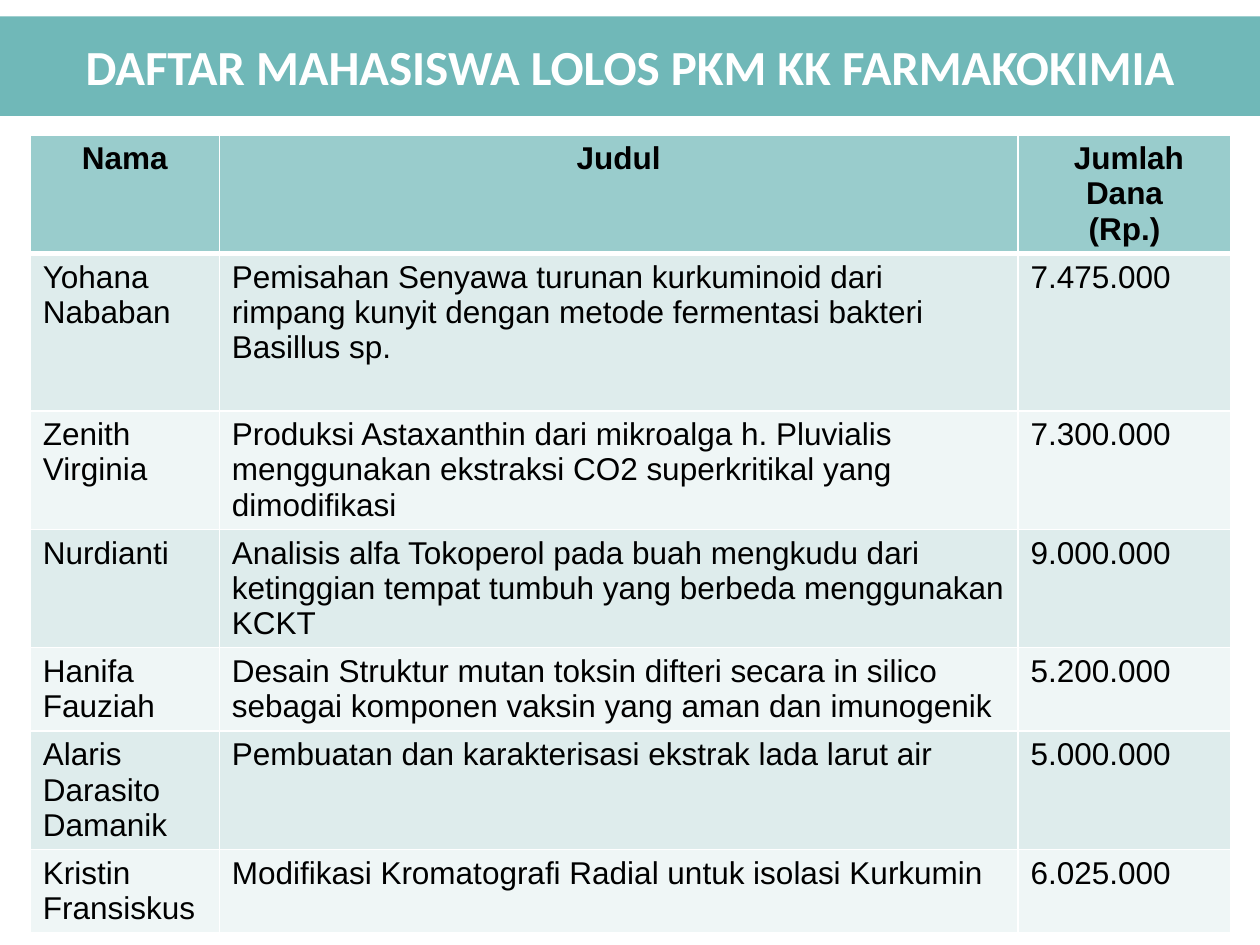
from pptx import Presentation, util as u
from pptx.dml.color import RGBColor
from pptx.enum import text as t
from pptx.oxml import parse_xml
from pptx.oxml.ns import nsdecls

TITLE = "DAFTAR MAHASISWA LOLOS PKM KK FARMAKOKIMIA"
HEAD = ("Nama", "Judul", " Jumlah Dana\n(Rp.)")
ROWS = [
    ("Yohana Nababan", "Pemisahan Senyawa turunan kurkuminoid dari rimpang kunyit dengan metode fermentasi bakteri Basillus sp.", "7.475.000"),
    ("Zenith Virginia", "Produksi Astaxanthin dari mikroalga h. Pluvialis menggunakan ekstraksi CO2 superkritikal yang dimodifikasi", "7.300.000"),
    ("Nurdianti", "Analisis alfa Tokoperol pada buah mengkudu dari ketinggian tempat tumbuh yang berbeda menggunakan KCKT", "9.000.000"),
    ("Hanifa Fauziah", "Desain Struktur mutan toksin difteri secara in silico sebagai komponen vaksin yang aman dan imunogenik", "5.200.000"),
    ("Alaris Darasito Damanik", "Pembuatan dan karakterisasi ekstrak lada larut air", "5.000.000"),
    ("Kristin Fransiskus", "Modifikasi Kromatografi Radial untuk isolasi Kurkumin", "6.025.000"),
]
COLS = (1.5, 6.34, 1.69)
HIGH = (0.93, 1.25, 0.94, 0.94, 0.66, 0.94, 0.66)
HUES = {"title": "70B8B8", "head": "99CCCC", "odd": "DEECEC",
        "even": "EFF6F6", "white": "FFFFFF", "ink": "000000"}


def paint(fill, hue):
    fill.solid()
    fill.fore_color.rgb = RGBColor.from_string(HUES[hue])


def style(para, face, size, hue, bold):
    for run in para.runs:
        font = run.font
        font.name, font.size, font.bold = face, u.Pt(size), bold
        font.color.rgb = RGBColor.from_string(HUES[hue])


def edge(cell, side, width):
    return parse_xml(
        f'<a:{side} {nsdecls("a")} w="{u.Pt(width)}"><a:solidFill>'
        f'<a:srgbClr val="{HUES["white"]}"/></a:solidFill></a:{side}>')


def fill_cell(cell, words, row):
    head = row == 0
    cell.text_frame.text = words
    for para in cell.text_frame.paragraphs:
        para.alignment = t.PP_ALIGN.CENTER if head else t.PP_ALIGN.LEFT
        style(para, "Arial", 18, "ink", head)
    props = cell._tc.get_or_add_tcPr()
    for side in ("lnL", "lnR", "lnT", "lnB"):
        thick = (head and side == "lnB") or (row == 1 and side == "lnT")
        props.append(edge(cell, side, 3 if thick else 1))
    paint(cell.fill, "head" if head else "odd" if row % 2 else "even")


def main():
    deck = Presentation()
    deck.slide_width, deck.slide_height = u.Inches(10), u.Inches(7.5)
    slide = deck.slides.add_slide(deck.slide_layouts[5])

    title = slide.shapes.title
    title.left, title.top = 0, u.Inches(0.13)
    title.width, title.height = deck.slide_width, u.Inches(0.79)
    paint(title.fill, "title")
    frame = title.text_frame
    frame.text = TITLE
    frame.vertical_anchor = t.MSO_ANCHOR.MIDDLE
    frame.paragraphs[0].alignment = t.PP_ALIGN.CENTER
    style(frame.paragraphs[0], "Calibri", 28, "white", True)

    data = [HEAD] + ROWS
    table = slide.shapes.add_table(
        len(data), len(COLS), u.Inches(0.24), u.Inches(1.07),
        u.Inches(sum(COLS)), u.Inches(sum(HIGH))).table
    for col, width in zip(table.columns, COLS):
        col.width = u.Inches(width)
    for row, high in zip(table.rows, HIGH):
        row.height = u.Inches(high)
    for r, line in enumerate(data):
        for c, words in enumerate(line):
            fill_cell(table.cell(r, c), words, r)
    deck.save("out.pptx")


if __name__ == "__main__":
    main()
